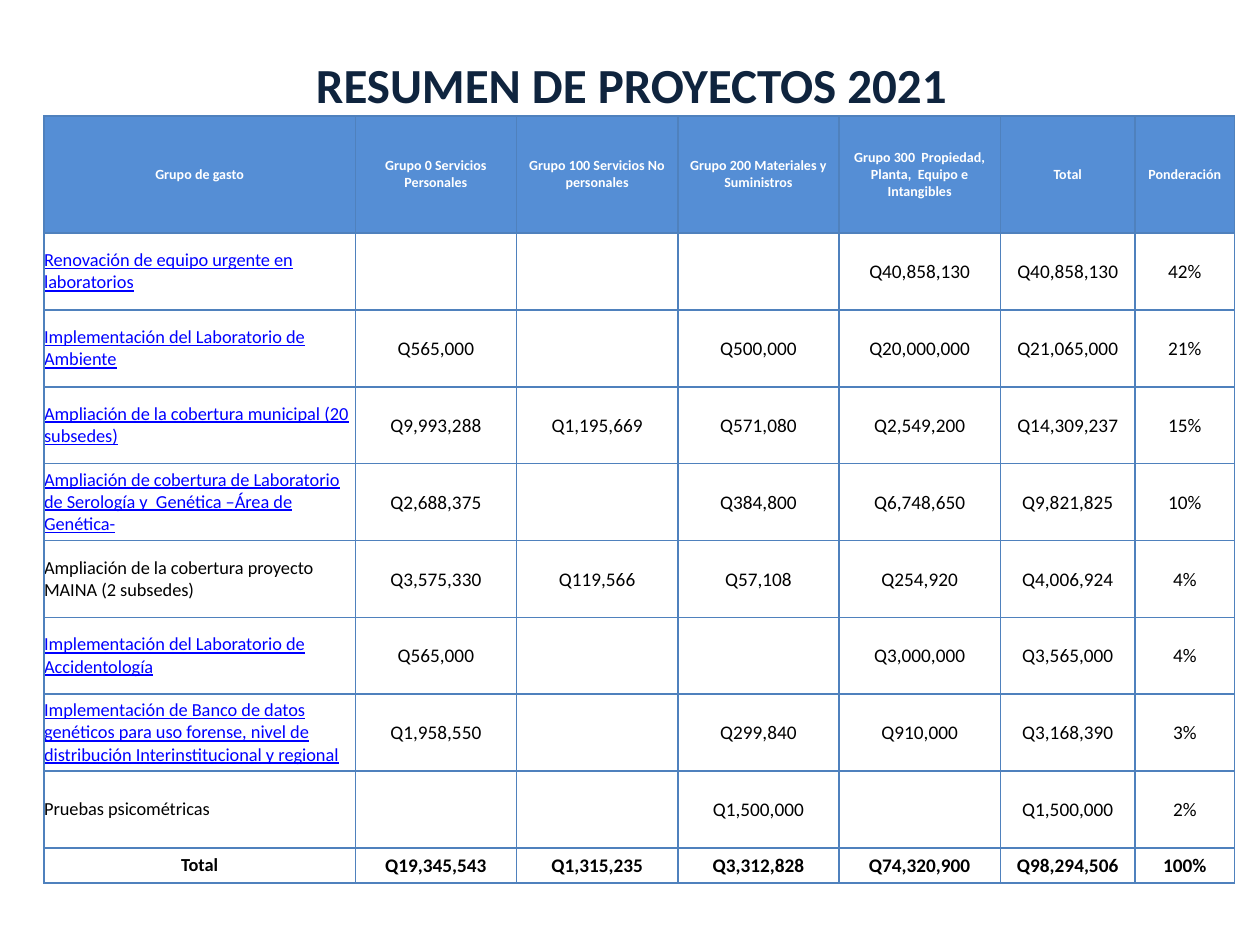
from lxml import etree
from pptx import Presentation
from pptx.dml.color import RGBColor
from pptx.enum import text
from pptx.oxml import ns
from pptx.util import Inches, Pt

FONT = "Calibri"
WIDTHS = [2.47, 1.28, 1.28, 1.28, 1.28, 1.07, 0.79]
HEADS = [
    "Grupo de gasto",
    "Grupo 0 Servicios Personales",
    "Grupo 100 Servicios No personales",
    "Grupo 200 Materiales y Suministros",
    "Grupo 300  Propiedad, Planta,  Equipo e Intangibles",
    "Total",
    "Ponderación",
]
ROWS = [
    ["Renovación de equipo urgente en laboratorios",
     "", "", "", "Q40,858,130", "Q40,858,130", "42%"],
    ["Implementación del Laboratorio de Ambiente",
     "Q565,000", "", "Q500,000", "Q20,000,000", "Q21,065,000", "21%"],
    ["Ampliación de la cobertura municipal (20 subsedes)",
     "Q9,993,288", "Q1,195,669", "Q571,080", "Q2,549,200", "Q14,309,237", "15%"],
    ["Ampliación de cobertura de Laboratorio de Serología y  Genética –Área de Genética-",
     "Q2,688,375", "", "Q384,800", "Q6,748,650", "Q9,821,825", "10%"],
    ["Ampliación de la cobertura proyecto MAINA (2 subsedes)",
     "Q3,575,330", "Q119,566", "Q57,108", "Q254,920", "Q4,006,924", "4%"],
    ["Implementación del Laboratorio de Accidentología",
     "Q565,000", "", "", "Q3,000,000", "Q3,565,000", "4%"],
    ["Implementación de Banco de datos genéticos para uso forense, "
     "nivel de distribución Interinstitucional y regional",
     "Q1,958,550", "", "Q299,840", "Q910,000", "Q3,168,390", "3%"],
    ["Pruebas psicométricas",
     "", "", "Q1,500,000", "", "Q1,500,000", "2%"],
]
TOTALS = ["Total", "Q19,345,543", "Q1,315,235", "Q3,312,828",
          "Q74,320,900", "Q98,294,506", "100%"]
PLAIN = (5, 8)


def color(code):
    return RGBColor.from_string(code)


def style(para, size, code, bold=False, line=False, align=text.PP_ALIGN.CENTER):
    para.alignment = align
    font = para.font
    font.name = FONT
    font.size = Pt(size)
    font.bold = bold
    font.underline = line
    font.color.rgb = color(code)


def border(cell, code, width):
    props = cell._tc.get_or_add_tcPr()
    for side in ("lnL", "lnR", "lnT", "lnB"):
        line = etree.SubElement(props, ns.qn(f"a:{side}"), w=str(Pt(width)))
        fill = etree.SubElement(line, ns.qn("a:solidFill"))
        etree.SubElement(fill, ns.qn("a:srgbClr"), val=code)


def add_title(slide, words):
    title = slide.shapes.title
    title.left, title.top = Inches(0.13), Inches(0.21)
    title.width, title.height = Inches(9.76), Inches(0.91)
    frame = title.text_frame
    frame.text = words
    frame.auto_size = text.MSO_AUTO_SIZE.NONE
    frame.vertical_anchor = text.MSO_ANCHOR.MIDDLE
    style(frame.paragraphs[0], 28, "0F243E", bold=True)


def fill_cell(cell, words, row, col, last):
    border(cell, "4F81BD", 1)
    cell.vertical_anchor = text.MSO_ANCHOR.MIDDLE
    inset = Inches(0.01 if row and col else 0)
    cell.margin_left = cell.margin_right = cell.margin_top = inset
    cell.margin_bottom = 0
    cell.text = words
    para = cell.text_frame.paragraphs[0]
    if row == 0:
        cell.fill.solid()
        cell.fill.fore_color.rgb = color("558ED5")
        style(para, 8, "FFFFFF", bold=True)
        return
    cell.fill.background()
    if col or row == last:
        style(para, 11 if col else 10.5, "000000", bold=row == last)
    else:
        link = row not in PLAIN
        style(para, 10.5, "0000FF" if link else "000000", line=link,
              align=text.PP_ALIGN.LEFT)


def add_grid(slide):
    data = [HEADS, *ROWS, TOTALS]
    highs = [0.93] + [0.61] * len(ROWS) + [0.28]
    frame = slide.shapes.add_table(len(data), len(HEADS), Inches(0.35), Inches(0.92),
                                   Inches(sum(WIDTHS)), Inches(sum(highs)))
    table = frame.table
    table.first_row = table.horz_banding = False
    for column, width in zip(table.columns, WIDTHS):
        column.width = Inches(width)
    for row, (line, high) in enumerate(zip(data, highs)):
        table.rows[row].height = Inches(high)
        for col, words in enumerate(line):
            fill_cell(table.cell(row, col), words, row, col, len(data) - 1)


def main():
    deck = Presentation()
    deck.slide_width, deck.slide_height = Inches(10), Inches(7.5)
    slide = deck.slides.add_slide(deck.slide_layouts[5])
    add_title(slide, "RESUMEN DE PROYECTOS 2021")
    add_grid(slide)
    deck.save("out.pptx")


if __name__ == "__main__":
    main()
